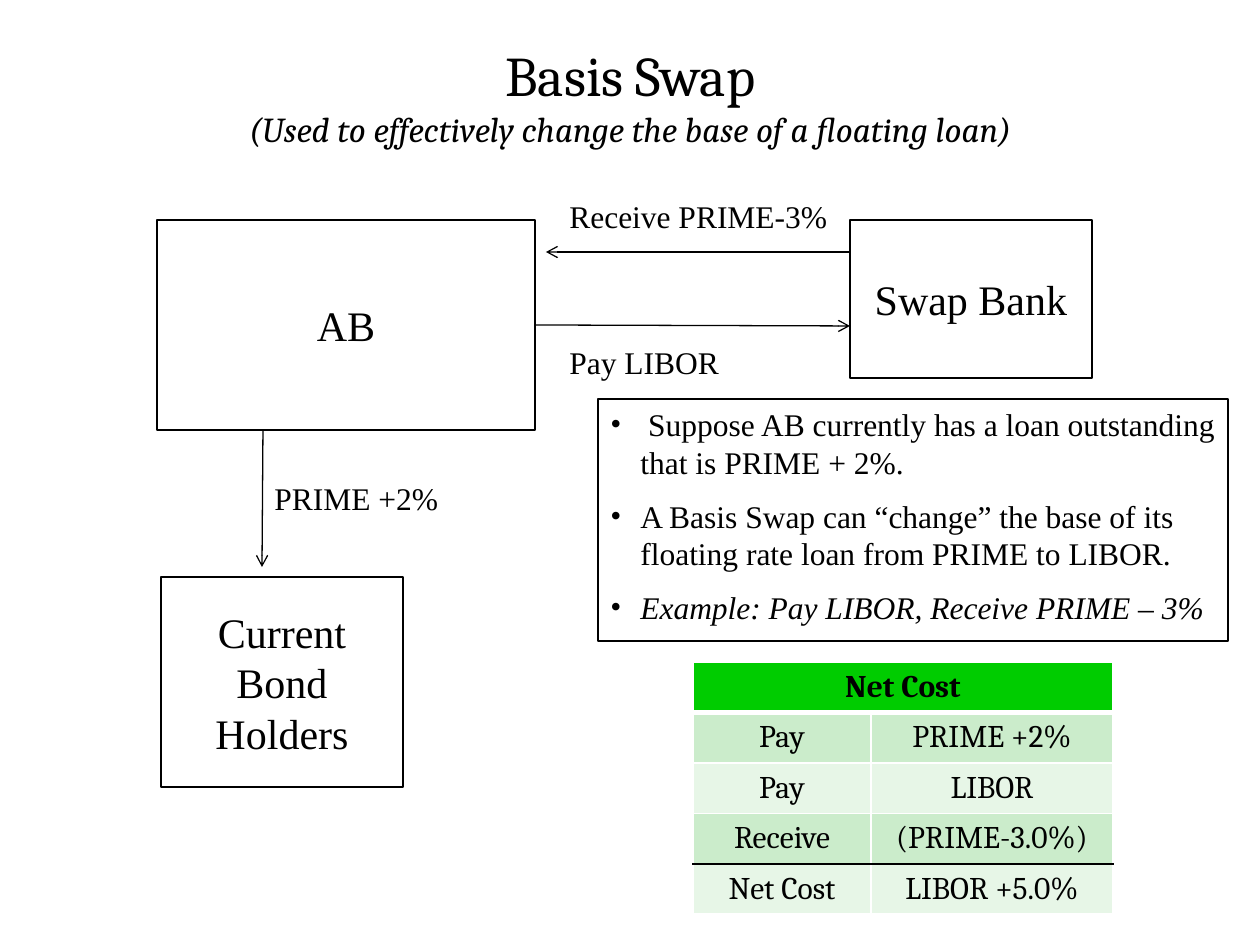
from lxml.etree import SubElement
from pptx import Presentation
from pptx.dml.color import RGBColor
from pptx.enum.shapes import MSO_CONNECTOR, MSO_SHAPE
from pptx.enum.text import MSO_ANCHOR as ANCHOR, PP_ALIGN as ALIGN
from pptx.oxml.ns import qn
from pptx.util import Emu, Pt

SERIF, HEADING = "Times New Roman", "Cambria"
BLACK, WHITE = "000000", "FFFFFF"
GREEN, MID_GREEN, PALE_GREEN = "00CC00", "CBECCB", "E7F6E7"


def px(value):
    return Emu(round(value * 914400 / 126))


def color(hex_string):
    return RGBColor.from_string(hex_string)


def format_paragraph(paragraph, size, font=SERIF, align=ALIGN.LEFT, bold=False, italic=False):
    paragraph.alignment = align
    for run in paragraph.runs:
        run.font.name = font
        run.font.size = Pt(size)
        run.font.bold = bold
        run.font.italic = italic
        run.font.color.rgb = color(BLACK)


def add_title(slide, title, subtitle):
    shape = slide.shapes.add_textbox(px(95), px(32), px(1071), px(126))
    text_frame = shape.text_frame
    text_frame.word_wrap = True
    text_frame.vertical_anchor = ANCHOR.MIDDLE
    text_frame.text = f"{title}\v{subtitle}"
    paragraph = text_frame.paragraphs[0]
    format_paragraph(paragraph, 32, HEADING, ALIGN.CENTER)
    subtitle_font = paragraph.runs[1].font
    subtitle_font.size = Pt(20)
    subtitle_font.italic = True


def add_box(slide, left, top, width, height, text="", wrap=False):
    shape = slide.shapes.add_shape(MSO_SHAPE.RECTANGLE, px(left), px(top), px(width), px(height))
    shape.shadow.inherit = False
    shape.fill.background()
    shape.line.color.rgb = color(BLACK)
    shape.line.width = Pt(0.75)
    text_frame = shape.text_frame
    text_frame.word_wrap = wrap
    text_frame.vertical_anchor = ANCHOR.MIDDLE
    text_frame.text = text
    format_paragraph(text_frame.paragraphs[0], 24, align=ALIGN.CENTER)
    return shape


def add_bullet_box(slide, left, top, width, height, items):
    text_frame = add_box(slide, left, top, width, height, wrap=True).text_frame
    text_frame.vertical_anchor = ANCHOR.TOP
    text_frame.text = "\n".join(text for text, _ in items)
    for index, (paragraph, (_, italic)) in enumerate(zip(text_frame.paragraphs, items)):
        format_paragraph(paragraph, 18, italic=italic)
        paragraph.space_before = Pt(9 if index else 1)
        properties = paragraph._p.get_or_add_pPr()
        properties.set("marL", str(px(30)))
        properties.set("indent", str(-px(30)))
        SubElement(properties, qn("a:buFont"), typeface=SERIF)
        SubElement(properties, qn("a:buChar"), char="•")


def add_label(slide, left, top, width, text):
    shape = slide.shapes.add_textbox(px(left), px(top), px(width), px(50))
    shape.text_frame.word_wrap = True
    shape.text_frame.text = text
    format_paragraph(shape.text_frame.paragraphs[0], 18)


def add_arrow(slide, x1, y1, x2, y2):
    arrow = slide.shapes.add_connector(MSO_CONNECTOR.STRAIGHT, px(x1), px(y1), px(x2), px(y2))
    arrow.line.color.rgb = color(BLACK)
    arrow.line.width = Pt(0.75)
    SubElement(arrow.line._get_or_add_ln(), qn("a:tailEnd"), type="arrow")
    SubElement(arrow._element.spPr, qn("a:effectLst"))
    return arrow


def style_cell(cell, text, fill, top, bottom, bold=False):
    """Format one cell; top and bottom are (colour, points) borders."""
    properties = cell._tc.get_or_add_tcPr()
    side = (WHITE, 1)
    for tag, (hex_string, width) in zip(("lnL", "lnR", "lnT", "lnB"), (side, side, top, bottom)):
        line = SubElement(properties, qn(f"a:{tag}"), w=str(Pt(width)))
        SubElement(SubElement(line, qn("a:solidFill")), qn("a:srgbClr"), val=hex_string)
    cell.fill.solid()
    cell.fill.fore_color.rgb = color(fill)
    cell.vertical_anchor = ANCHOR.MIDDLE
    cell.text = text
    format_paragraph(cell.text_frame.paragraphs[0], 18, HEADING, ALIGN.CENTER, bold)


def add_cost_table(slide, left, top, widths, row_height, heading, rows):
    row_count = len(rows) + 1
    frame = slide.shapes.add_table(row_count, len(widths), px(left), px(top),
                                   px(sum(widths)), px(row_height * row_count))
    table = frame.table
    for column, width in zip(table.columns, widths):
        column.width = px(width)
    for row in table.rows:
        row.height = px(row_height)

    # Rules between rows: thick under the heading, black above the total
    rules = [(WHITE, 1)] * (row_count + 1)
    rules[1] = (WHITE, 3)
    rules[-2] = (BLACK, 1)
    for r, values in enumerate([(heading, "")] + rows):
        fill = GREEN if r == 0 else MID_GREEN if r % 2 else PALE_GREEN
        for c, text in enumerate(values):
            style_cell(table.cell(r, c), text, fill, rules[r], rules[r + 1], bold=r == 0)
    table.cell(0, 0).merge(table.cell(0, len(widths) - 1))


def main():
    presentation = Presentation()
    presentation.slide_width, presentation.slide_height = px(1260), px(945)
    slide = presentation.slides.add_slide(presentation.slide_layouts[6])

    add_title(slide, "Basis Swap", "(Used to effectively change the base of a floating loan)")

    # Explanation
    add_bullet_box(slide, 598, 399, 630, 242, [
        (" Suppose AB currently has a loan outstanding that is PRIME + 2%.", False),
        ("A Basis Swap can “change” the base of its floating rate loan from PRIME to LIBOR.", False),
        ("Example: Pay LIBOR, Receive PRIME – 3%", True),
    ])

    # Parties to the swap
    add_box(slide, 850, 220, 242, 158, "Swap Bank")
    borrower = add_box(slide, 157, 220, 378, 210, "AB")
    add_box(slide, 161, 577, 242, 210, "Current Bond Holders", wrap=True)

    # Payments
    add_arrow(slide, 850, 252, 546, 252)
    pay_arrow = add_arrow(slide, 535, 325, 850, 326)
    pay_arrow.begin_connect(borrower, 3)
    add_arrow(slide, 263, 430, 262, 567)
    add_label(slide, 557, 337, 262, "Pay LIBOR")
    add_label(slide, 557, 191, 284, "Receive PRIME-3%")
    add_label(slide, 262, 473, 262, "PRIME +2%")

    # Net cost
    add_cost_table(slide, 693, 662, (178, 242), 50, "Net Cost", [
        ("Pay", "PRIME +2%"),
        ("Pay", "LIBOR"),
        ("Receive", "(PRIME-3.0%)"),
        ("Net Cost", "LIBOR +5.0%"),
    ])

    presentation.save("out.pptx")


if __name__ == "__main__":
    main()
